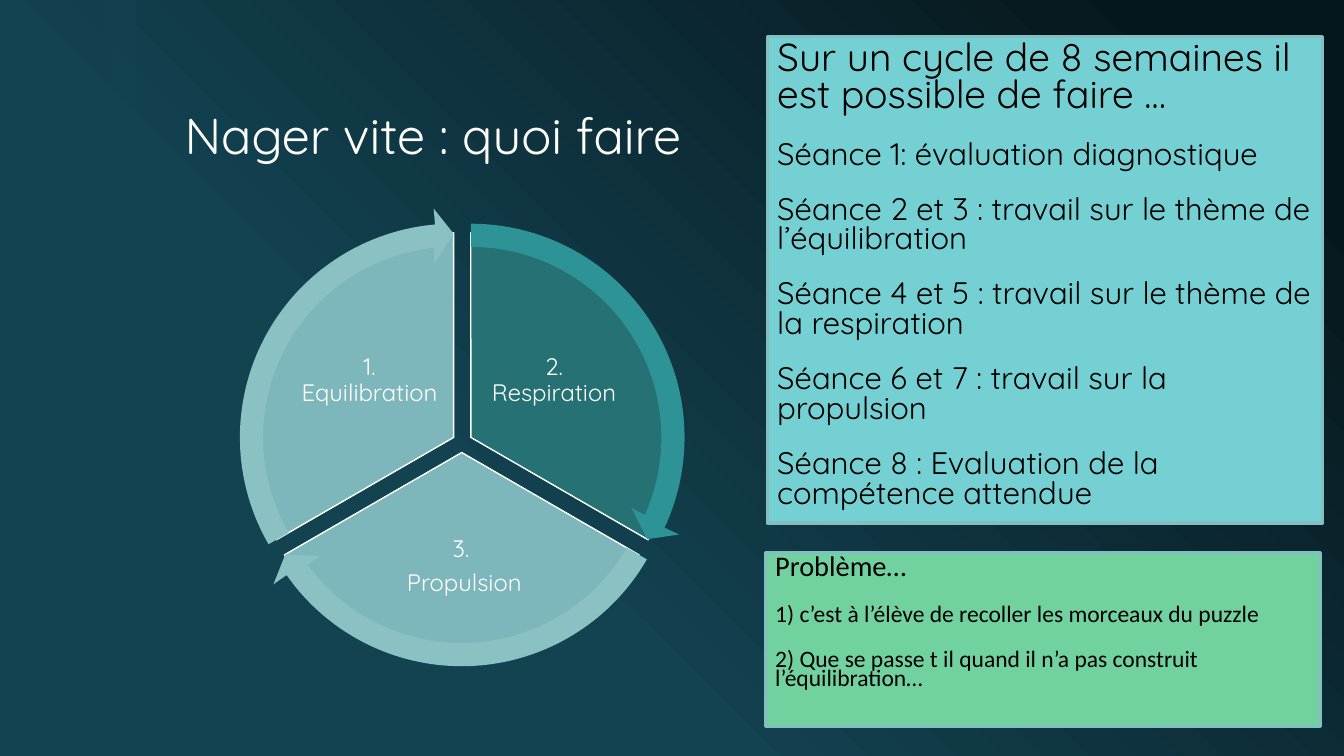
"""Build the slide on swimming fast: a three-part cycle, a session plan and a problem box."""
from copy import deepcopy
from math import atan, cos, degrees, hypot, radians, sin, tan

from lxml.etree import SubElement
from pptx import Presentation
from pptx.dml.color import RGBColor
from pptx.enum.shapes import MSO_SHAPE
from pptx.enum.text import MSO_ANCHOR, PP_ALIGN
from pptx.oxml.ns import qn
from pptx.util import Pt

PX = 9144
WHITE, BLACK = "FFFFFF", "000000"


def paint(target, color):
    """Give a fill or line format one solid colour."""
    target.solid()
    target.fore_color.rgb = RGBColor.from_string(color)


def write_text(shape, lines, sizes, font, color, anchor, align, spacing, gap, margins):
    """Write the lines as paragraphs; the first size is for the first line, the last for the rest."""
    frame = shape.text_frame
    side, top = margins
    frame_format = {
        "word_wrap": True, "vertical_anchor": anchor,
        "margin_left": side * PX, "margin_right": side * PX,
        "margin_top": top * PX, "margin_bottom": top * PX,
    }
    for name, value in frame_format.items():
        setattr(frame, name, value)
    for index, line in enumerate(lines):
        paragraph = frame.add_paragraph() if index else frame.paragraphs[0]
        run = paragraph.add_run()
        run.text = line
        paragraph_format = {
            "alignment": align, "line_spacing": spacing,
            "space_before": Pt(gap if index else 0),
        }
        for name, value in paragraph_format.items():
            setattr(paragraph, name, value)
        run.font.name = font
        run.font.size = Pt(sizes[-1] if index else sizes[0])
        paint(run.font.fill, color)


presentation = Presentation()
presentation.slide_width = 1333 * PX
presentation.slide_height = 750 * PX
slide = presentation.slides.add_slide(presentation.slide_layouts[5])
shapes = slide.shapes

background = slide.background.fill
background.gradient()
background.gradient_angle = 225
stop_list = slide.element.find(".//" + qn("a:gsLst"))
for stop_element in list(stop_list):
    stop_list.append(deepcopy(stop_element))
gradient = [(0, "06171C"), (0.1, "06171C"), (0.65, "134251"), (1, "134251")]
for stop, (position, color) in zip(background.gradient_stops, gradient):
    stop.position = position
    stop.color.rgb = RGBColor.from_string(color)

band = shapes.add_shape(MSO_SHAPE.RECTANGLE, 110 * PX, 0, 25 * PX, 750 * PX)
band.shadow.inherit = False
paint(band.fill, "134251")
band.line.fill.background()
SubElement(band.element.spPr.find(".//" + qn("a:srgbClr")), qn("a:alpha"), val="60000")

title = shapes.title
title.left, title.top, title.width, title.height = [n * PX for n in (173, 36, 569, 133)]
write_text(title, ["Nager vite : quoi faire"], [36], "Quicksand", WHITE,
           MSO_ANCHOR.BOTTOM, PP_ALIGN.LEFT, 0.9, 0, (10, 5))

PIE_RADIUS = 203
sectors = [
    (467, 434, -90, "257174", "2E9396", ["2. Respiration"], (477, 317, 145, 121)),
    (458, 449, 30, "7DB7BB", "8AC1C2", ["3. ", "Propulsion"], (352, 509, 217, 106)),
    (450, 434, 150, "7DB7BB", "8AC1C2", ["1. Equilibration"], (294, 317, 145, 121)),
]
for center_x, center_y, start, pie_color, arrow_color, lines, label_box in sectors:
    pie = shapes.add_shape(MSO_SHAPE.PIE, (center_x - PIE_RADIUS) * PX,
                           (center_y - PIE_RADIUS) * PX,
                           2 * PIE_RADIUS * PX, 2 * PIE_RADIUS * PX)
    pie.shadow.inherit = False
    pie.adjustments[0] = start % 360 * 0.6
    pie.adjustments[1] = (start + 120) % 360 * 0.6
    paint(pie.fill, pie_color)
    paint(pie.line.fill, WHITE)
    pie.line.width = Pt(1)

    label = shapes.add_textbox(*[n * PX for n in label_box])
    write_text(label, lines, [17], "Quicksand", WHITE,
               MSO_ANCHOR.MIDDLE, PP_ALIGN.CENTER, 0.9, 6, (2, 2))

ARROW_RADIUS = 228
curves = []
for radius, begin, end in [(212, 0, 57.5), (212, 57.5, 115), (189, 114, 57), (189, 57, 0)]:
    handle = 4 / 3 * tan(radians(end - begin) / 4)
    reach, turn = radius * hypot(1, handle), degrees(atan(handle))
    curves.append(("cubicBezTo", [(reach, begin + turn), (reach, end - turn), (radius, end)]))
arrow_head = [("lnTo", [corner])
              for corner in [(228, 115), (202, 120), (174, 113.7), (189, 114)]]
arrow_outline = [("moveTo", [(212, 0)])] + curves[:2] + arrow_head + curves[2:] + [("close", [])]

for center_x, center_y, start, pie_color, arrow_color, lines, label_box in sectors:
    left, top = (center_x - ARROW_RADIUS) * PX, (center_y - ARROW_RADIUS) * PX
    side = 2 * ARROW_RADIUS * PX
    builder = shapes.build_freeform(left, top)
    builder.add_line_segments([(left + side, top), (left + side, top + side)])
    arrow = builder.convert_to_shape()
    outline = arrow.element.spPr.find(".//" + qn("a:path"))
    for step in list(outline):
        outline.remove(step)
    for command, points in arrow_outline:
        step = SubElement(outline, qn("a:" + command))
        for radius, angle in points:
            direction = radians(start + angle)
            SubElement(step, qn("a:pt"),
                       x=str(round((ARROW_RADIUS + radius * cos(direction)) * PX)),
                       y=str(round((ARROW_RADIUS + radius * sin(direction)) * PX)))
    arrow.shadow.inherit = False
    paint(arrow.fill, arrow_color)
    arrow.line.fill.background()

sessions = [
    "Sur un cycle de 8 semaines il est possible de faire …",
    "Séance 1: évaluation diagnostique",
    "Séance 2 et 3 : travail sur le thème de l’équilibration",
    "Séance 4 et 5 : travail sur le thème de la respiration",
    "Séance 6 et 7 : travail sur la propulsion",
    "Séance 8 : Evaluation de la compétence attendue",
]
problems = [
    "Problème…",
    "1) c’est à l’élève de recoller les morceaux du puzzle",
    "2) Que se passe t il quand il n’a pas construit l’équilibration…",
]
panels = [
    ((761, 36, 551, 483), "75D0D3", sessions, [27.8, 22.2], "Quicksand", 0.8),
    ((759, 548, 551, 173), "71D19F", problems, [20.3, 16.8], "Calibri", 0.7),
]
for box, color, lines, sizes, font, spacing in panels:
    panel = shapes.add_shape(MSO_SHAPE.RECTANGLE, *[n * PX for n in box])
    panel.shadow.inherit = False
    paint(panel.fill, color)
    paint(panel.line.fill, "83BEC0")
    panel.line.width = Pt(2.25)
    write_text(panel, lines, sizes, font, BLACK,
               MSO_ANCHOR.TOP, PP_ALIGN.LEFT, spacing, 18, (10, 5))

presentation.save("out.pptx")
